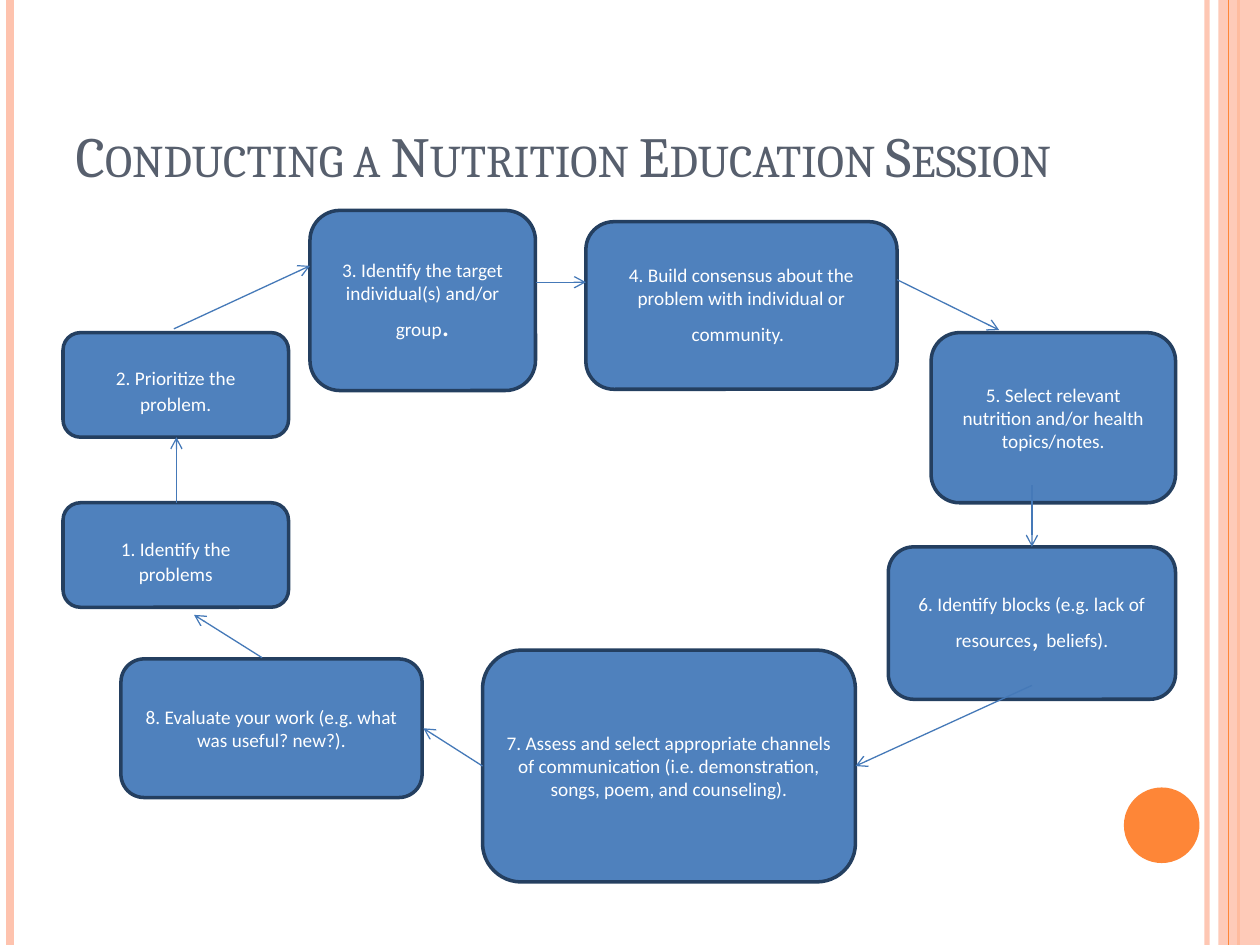
from dataclasses import dataclass

from lxml import etree
from pptx import Presentation
from pptx.dml.color import RGBColor
from pptx.enum import shapes, text
from pptx.oxml import ns
from pptx.util import Inches, Pt


@dataclass(frozen=True)
class Theme:
    title: str = "575F6D"
    box: str = "4F81BD"
    border: str = "243F60"
    arrow: str = "4579B8"
    accent: str = "FE8637"
    pale: str = "FEC3AE"
    white: str = "FFFFFF"
    title_font: str = "Cambria"
    body_font: str = "Calibri"
    title_size: float = 32.4
    body_size: float = 11
    large_size: float = 18


T = Theme()
HEIGHT = 7.5

# Decorative verticals: x, colour, width in points, opacity in percent
STRIPES = [
    (9.58, T.pale, 3, 93),
    (0.08, T.pale, 4.5, 100),
    (9.83, T.accent, 1.5, 100),
]

# Steps: left, top, width, height, text runs (alternating body and large size)
STEPS = [
    (0.5, 3.99, 1.79, 0.83, ["1. Identify the", " ", "problems"]),
    (0.5, 2.64, 1.79, 0.83, ["2. Prioritize the", " ", "problem."]),
    (2.46, 1.67, 1.79, 1.43,
     ["3. Identify the target individual(s) and/or group", "."]),
    (4.65, 1.76, 2.47, 1.33,
     ["4. Build consensus about the problem with individual or community.", " "]),
    (7.39, 2.64, 1.94, 1.35,
     ["5. Select relevant nutrition and/or health topics/notes."]),
    (7.05, 4.34, 2.28, 1.21,
     ["6. Identify blocks (e.g. lack of resources", ", ", "beliefs)."]),
    (3.83, 5.16, 2.96, 1.84,
     ["7. Assess and select appropriate channels of communication "
      "(i.e. demonstration, songs, poem, and counseling)."]),
    (0.96, 5.23, 2.39, 1.1,
     ["8. Evaluate your work (e.g. what was useful? new?)."]),
]

# Arrows in step order: start x, start y, end x, end y
ARROWS = [
    (1.4, 3.99, 1.4, 3.47),
    (1.38, 2.61, 2.46, 2.11),
    (4.25, 2.24, 4.65, 2.24),
    (7.12, 2.22, 7.93, 2.62),
    (8.19, 3.85, 8.19, 4.34),
    (8.19, 5.44, 6.79, 6.08),
    (3.83, 6.08, 3.36, 5.78),
    (2.08, 5.22, 1.54, 4.88),
]


def rgb(color):
    return RGBColor.from_string(color)


def set_opacity(element, percent):
    color = element.find(".//" + ns.qn("a:srgbClr"))
    etree.SubElement(color, ns.qn("a:alpha"), val=str(percent * 1000))


def add_run(p, content, *, size, font, color, small_caps=False):
    r = p.add_run()
    r.text = content
    r.font.size = Pt(size)
    r.font.name = font
    r.font.color.rgb = rgb(color)
    if small_caps:
        r.font._element.set("cap", "small")
    return r


def add_line(s, x1, y1, x2, y2, color, width, opacity=100, arrow=False):
    c = s.shapes.add_connector(shapes.MSO_CONNECTOR.STRAIGHT,
                               *map(Inches, (x1, y1, x2, y2)))
    c.line.color.rgb = rgb(color)
    c.line.width = Pt(width)
    if opacity < 100:
        set_opacity(c.line._get_or_add_ln(), opacity)
    if arrow:
        etree.SubElement(c.line._get_or_add_ln(), ns.qn("a:tailEnd"), type="arrow")
    etree.SubElement(c._element.spPr, ns.qn("a:effectLst"))


def add_shape(s, kind, left, top, width, height, fill, border=None):
    sp = s.shapes.add_shape(kind, *map(Inches, (left, top, width, height)))
    sp.shadow.inherit = False
    sp.fill.solid()
    sp.fill.fore_color.rgb = rgb(fill)
    if border:
        sp.line.color.rgb = rgb(border)
        sp.line.width = Pt(2)
    else:
        sp.line.fill.background()
    return sp


def add_step(s, left, top, width, height, runs):
    sp = add_shape(s, shapes.MSO_SHAPE.ROUNDED_RECTANGLE,
                   left, top, width, height, T.box, T.border)
    tf = sp.text_frame
    tf.word_wrap = True
    tf.vertical_anchor = text.MSO_ANCHOR.MIDDLE
    p = tf.paragraphs[0]
    p.alignment = text.PP_ALIGN.CENTER
    p.space_before = p.space_after = Pt(5)
    for i, content in enumerate(runs):
        add_run(p, content, size=T.large_size if i % 2 else T.body_size,
                font=T.body_font, color=T.white)


def add_decoration(s):
    for x, color, width, opacity in STRIPES:
        add_line(s, x, 0, x, HEIGHT, color, width, opacity)
    band = add_shape(s, shapes.MSO_SHAPE.RECTANGLE, 9.67, 0, 0.33, HEIGHT, T.pale)
    set_opacity(band._element.spPr, 87)
    add_line(s, 9.75, 0, 9.75, HEIGHT, T.accent, 0.75)
    add_shape(s, shapes.MSO_SHAPE.OVAL, 8.92, 6.25, 0.6, 0.6, T.accent)


def set_title(s, content):
    sp = s.shapes.title
    sp.left, sp.top, sp.width, sp.height = map(Inches, (0.5, 0.3, 8.17, 1.25))
    tf = sp.text_frame
    tf.word_wrap = True
    tf.auto_size = text.MSO_AUTO_SIZE.NONE
    tf.vertical_anchor = text.MSO_ANCHOR.BOTTOM
    p = tf.paragraphs[0]
    p.alignment = text.PP_ALIGN.LEFT
    add_run(p, content, size=T.title_size, font=T.title_font,
            color=T.title, small_caps=True)


def main():
    prs = Presentation()
    prs.slide_width, prs.slide_height = Inches(10), Inches(HEIGHT)
    s = prs.slides.add_slide(prs.slide_layouts.get_by_name("Title Only"))

    # Side stripes and title
    add_decoration(s)
    set_title(s, "Conducting a Nutrition Education Session")

    # Cycle of steps
    for step in STEPS:
        add_step(s, *step)
    for ends in ARROWS:
        add_line(s, *ends, T.arrow, 0.75, arrow=True)

    prs.save("out.pptx")


if __name__ == "__main__":
    main()
